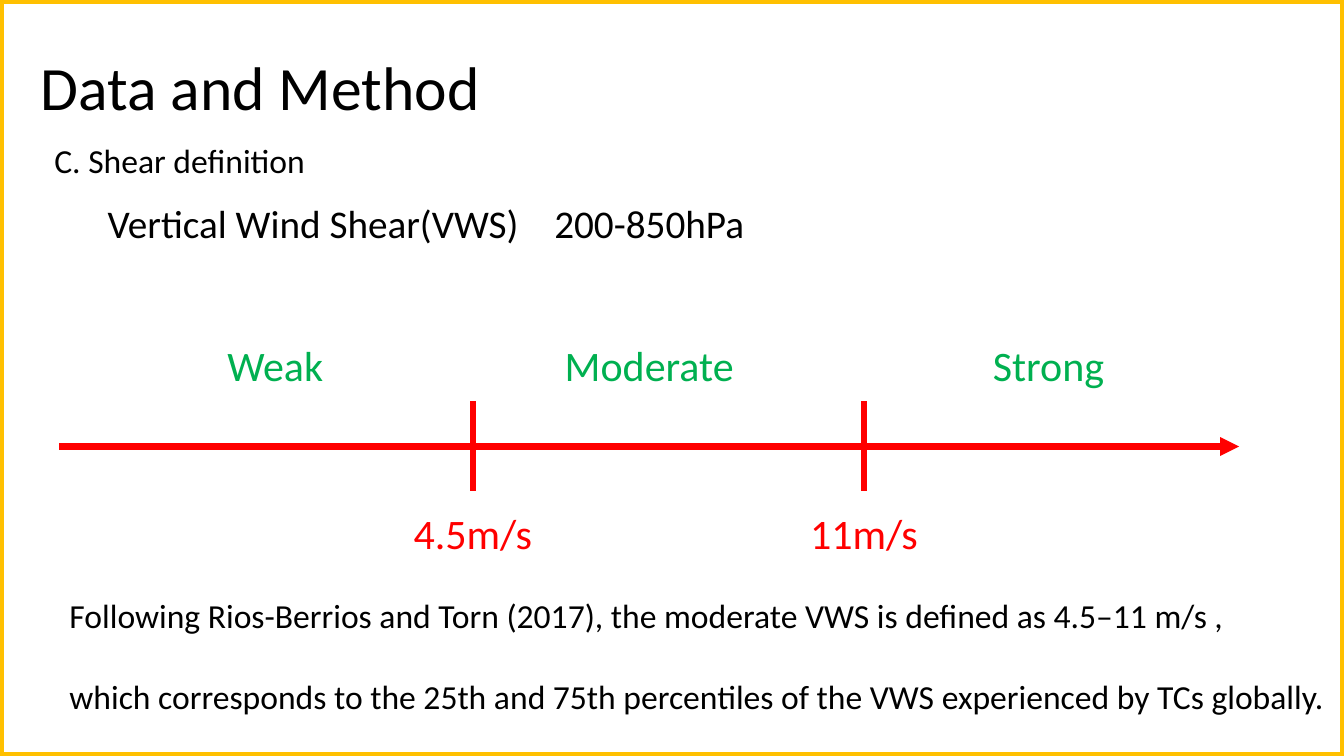
from dataclasses import dataclass

from pptx import Presentation
from pptx import util as u
from pptx.dml.color import RGBColor
from pptx.enum import shapes, text
from pptx.oxml import parse_xml
from pptx.oxml.ns import nsdecls, qn
from pptx.slide import Slide
from pptx.text.text import TextFrame

PX = 9144  # EMU per px, 100 px to the inch
WIDTH, HEIGHT = 1333, 750
FONT = "Calibri"
COLORS = {"ink": "000000", "axis": "FF0000", "class": "00B050", "frame": "FFC000"}
AXIS_Y = 443
TICK_TOP, TICK_BOTTOM = 398, 487


@dataclass(frozen=True)
class Label:
    """Unwrapped text centred on an x position."""
    words: str
    center: int
    top: int
    color: str


@dataclass(frozen=True)
class Passage:
    """Left-aligned text, one string per paragraph."""
    lines: tuple[str, ...]
    left: int
    top: int
    width: int
    height: int
    size: int
    line_spacing: float = 1.0
    gap: int = 0
    tab: int = 0


@dataclass(frozen=True)
class Stroke:
    start: tuple[int, int]
    end: tuple[int, int]
    arrow: bool = False


THRESHOLDS = {469: "4.5m/s", 857: "11m/s"}
SHEAR_CLASSES = {273: "Weak", 644: "Moderate", 1040: "Strong"}

LABELS = [Label(words, x, 499, "axis") for x, words in THRESHOLDS.items()]
LABELS += [Label(words, x, 332, "class") for x, words in SHEAR_CLASSES.items()]

STROKES = [Stroke((59, AXIS_Y), (1229, AXIS_Y), arrow=True)]
STROKES += [Stroke((x, TICK_TOP), (x, TICK_BOTTOM)) for x in THRESHOLDS]

PASSAGES = [
    Passage(("Vertical Wind Shear(VWS)\t200-850hPa",), 97, 198, 1150, 476, 28,
            line_spacing=0.9, tab=443),
    Passage(("C. Shear definition",), 44, 134, 1245, 50, 24),
    Passage(("Following Rios-Berrios and Torn (2017), the moderate VWS is defined as 4.5–11 m/s ,",
             "which corresponds to the 25th and 75th percentiles of the VWS experienced by TCs globally."),
            59, 585, 1275, 131, 24, gap=29),
]


def px(*lengths: int) -> list[u.Emu]:
    return [u.Emu(length * PX) for length in lengths]


def rgb(name: str) -> RGBColor:
    return RGBColor.from_string(COLORS[name])


def write(frame: TextFrame, lines: tuple[str, ...], size: int, color: str,
          align: text.PP_ALIGN, line_spacing: float = 1.0, gap: int = 0) -> None:
    """Fill a text frame, with a gap in points between paragraphs."""
    for number, line in enumerate(lines):
        paragraph = frame.add_paragraph() if number else frame.paragraphs[0]
        paragraph.alignment = align
        paragraph.line_spacing = line_spacing
        paragraph.space_before = u.Pt(gap if number else 0)
        run = paragraph.add_run()
        run.text = line
        run.font.name = FONT
        run.font.size = u.Pt(size)
        run.font.color.rgb = rgb(color)


def add_title(slide: Slide, words: str) -> None:
    title = slide.shapes.title
    title.left, title.top, title.width, title.height = px(30, 17, 1150, 145)
    frame = title.text_frame
    frame.auto_size = text.MSO_AUTO_SIZE.NONE
    frame.vertical_anchor = text.MSO_ANCHOR.MIDDLE
    write(frame, (words,), 44, "ink", text.PP_ALIGN.LEFT, 0.9)


def add_frame(slide: Slide) -> None:
    border = slide.shapes.add_shape(shapes.MSO_SHAPE.RECTANGLE, *px(0, 0, WIDTH, HEIGHT))
    border.shadow.inherit = False
    border.fill.background()
    border.line.color.rgb = rgb("frame")
    border.line.width = u.Pt(6)


def add_passage(slide: Slide, passage: Passage) -> None:
    box = slide.shapes.add_textbox(
        *px(passage.left, passage.top, passage.width, passage.height))
    frame = box.text_frame
    frame.word_wrap = True
    write(frame, passage.lines, passage.size, "ink", text.PP_ALIGN.LEFT,
          passage.line_spacing, passage.gap)
    if passage.tab:
        frame.paragraphs[0]._p.get_or_add_pPr().append(parse_xml(
            f'<a:tabLst {nsdecls("a")}><a:tab pos="{passage.tab * PX}" algn="l"/></a:tabLst>'))


def add_stroke(slide: Slide, stroke: Stroke) -> None:
    connector = slide.shapes.add_connector(
        shapes.MSO_CONNECTOR.STRAIGHT, *px(*stroke.start, *stroke.end))
    connector.line.color.rgb = rgb("axis")
    connector.line.width = u.Pt(4.5)
    if stroke.arrow:
        connector.line._get_or_add_ln().append(
            parse_xml(f'<a:tailEnd {nsdecls("a")} type="triangle"/>'))
    properties = connector._element.spPr
    properties.append(properties.makeelement(qn("a:effectLst"), {}))


def add_label(slide: Slide, label: Label) -> None:
    width = 190
    box = slide.shapes.add_textbox(*px(label.center - width // 2, label.top, width, 61))
    box.text_frame.word_wrap = False
    write(box.text_frame, (label.words,), 30, label.color, text.PP_ALIGN.CENTER)


def main() -> None:
    deck = Presentation()
    deck.slide_width, deck.slide_height = px(WIDTH, HEIGHT)
    slide = deck.slides.add_slide(deck.slide_layouts.get_by_name("Title Only"))
    add_title(slide, "Data and Method")
    add_frame(slide)
    for passage in PASSAGES:
        add_passage(slide, passage)
    for stroke in STROKES:
        add_stroke(slide, stroke)
    for label in LABELS:
        add_label(slide, label)
    deck.save("out.pptx")


if __name__ == "__main__":
    main()
